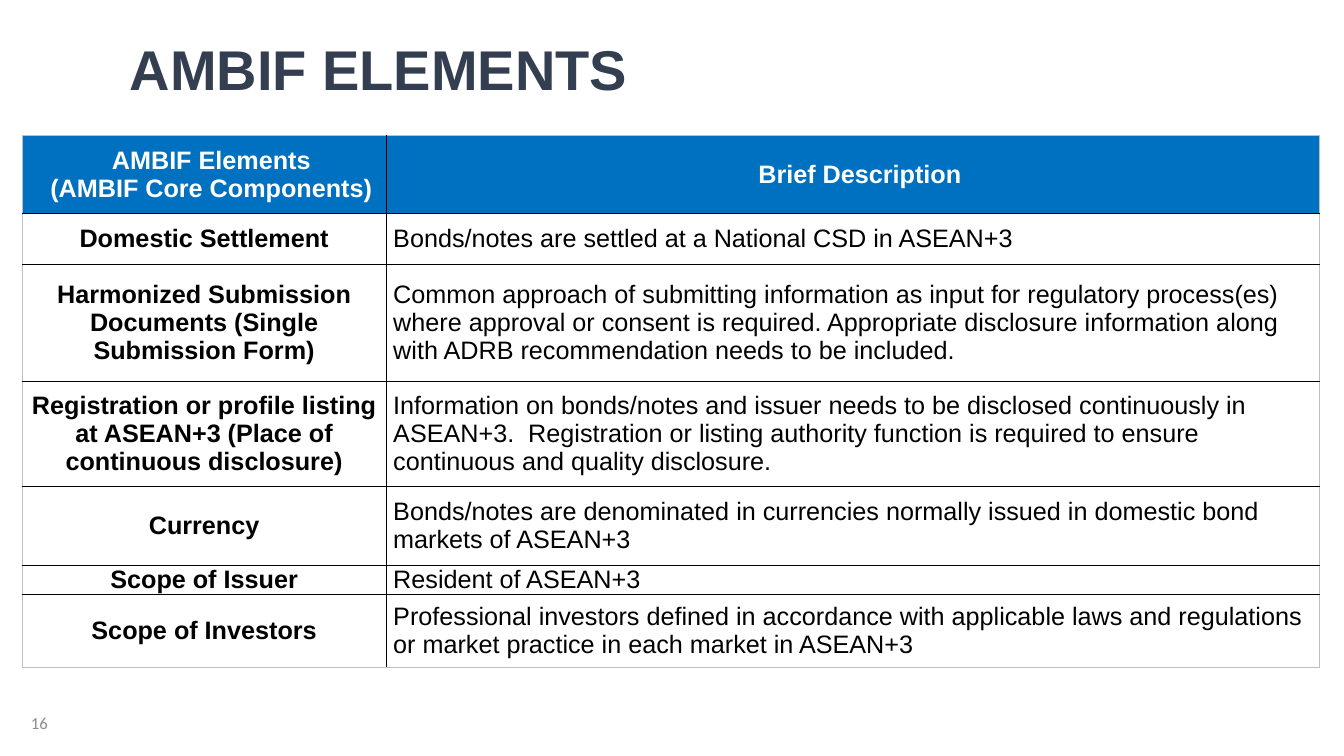
import pptx
import pptx.dml.color
import pptx.enum.text
import pptx.oxml
import pptx.oxml.ns
import pptx.util
from dataclasses import dataclass

Cm, Pt = pptx.util.Cm, pptx.util.Pt
ALIGN = pptx.enum.text.PP_ALIGN
MIDDLE = pptx.enum.text.MSO_ANCHOR.MIDDLE


@dataclass
class Theme:
    font: str = "Arial"
    number_font: str = "Calibri"
    title: str = "333F50"
    header: str = "0070C0"
    white: str = "FFFFFF"
    text: str = "000000"
    muted: str = "8C8C8C"
    edge: str = "BFBFBF"
    title_size: int = 40
    body_size: int = 18
    number_size: int = 12


class Deck:
    def __init__(self, prs, theme):
        self.theme = theme
        self.s = prs.slides.add_slide(prs.slide_layouts[5])

    def add_text(self, p, text, size, color, bold=False, font=None):
        for i, line in enumerate(text.split("\n")):
            if i:
                p.add_line_break()
            r = p.add_run()
            r.text = line
            r.font.name = font or self.theme.font
            r.font.size = Pt(size)
            r.font.bold = bold
            r.font.color.rgb = pptx.dml.color.RGBColor.from_string(color)

    def title(self, text, left, top, width, height):
        sp = self.s.shapes.title
        sp.left, sp.top, sp.width, sp.height = map(Cm, (left, top, width, height))
        tf = sp.text_frame
        tf.word_wrap = True
        tf.vertical_anchor = MIDDLE
        p = tf.paragraphs[0]
        p.alignment = ALIGN.LEFT
        p.line_spacing = 0.9
        self.add_text(p, text, self.theme.title_size, self.theme.title, True)

    def page_number(self, text, left, top, width, height):
        tf = self.s.shapes.add_textbox(*map(Cm, (left, top, width, height))).text_frame
        tf.word_wrap = True
        tf.vertical_anchor = MIDDLE
        self.add_text(tf.paragraphs[0], text, self.theme.number_size,
                      self.theme.muted, font=self.theme.number_font)

    def borders(self, cell, outer):
        """Draw the four sides, lighter where a side is on the table's edge."""
        tcPr = cell._tc.get_or_add_tcPr()
        for i, side in enumerate("LRTB"):
            color, width = (self.theme.edge, 0.5) if side in outer else (self.theme.text, 1)
            tcPr.insert(i, pptx.oxml.parse_xml(
                f'<a:ln{side} {pptx.oxml.ns.nsdecls("a")} w="{Pt(width)}"><a:solidFill>'
                f'<a:srgbClr val="{color}"/></a:solidFill></a:ln{side}>'))

    def cell(self, cell, text, header, label, outer):
        t = self.theme
        cell.margin_left = cell.margin_right = Cm(0.18)
        cell.margin_top = cell.margin_bottom = 0
        cell.vertical_anchor = MIDDLE
        if header:
            cell.fill.solid()
            cell.fill.fore_color.rgb = pptx.dml.color.RGBColor.from_string(t.header)
        else:
            cell.fill.background()
        self.borders(cell, outer)
        p = cell.text_frame.paragraphs[0]
        p.alignment = ALIGN.CENTER if header or label else ALIGN.LEFT
        if header:
            p._p.get_or_add_pPr().set("marL", str(Cm(0.36)))
        self.add_text(p, text, t.body_size, t.white if header else t.text, header or label)

    def table(self, rows, left, top, widths, heights):
        tbl = self.s.shapes.add_table(
            len(rows), len(widths), Cm(left), Cm(top),
            Cm(sum(widths)), Cm(sum(heights))).table
        tbl.horz_banding = False
        for col, width in zip(tbl.columns, widths):
            col.width = Cm(width)
        for i, (row, height) in enumerate(zip(rows, heights)):
            tbl.rows[i].height = Cm(height)
            for j, text in enumerate(row):
                outer = {"L" if j == 0 else "", "R" if j == len(widths) - 1 else "",
                         "T" if i == 0 else "", "B" if i == len(rows) - 1 else ""}
                self.cell(tbl.cell(i, j), text, i == 0, j == 0, outer)


ELEMENTS = [
    ("AMBIF Elements\n(AMBIF Core Components)", "Brief Description"),
    ("Domestic Settlement", "Bonds/notes are settled at a National CSD in ASEAN+3"),
    ("Harmonized Submission Documents (Single Submission Form)",
     "Common approach of submitting information as input for regulatory process(es) "
     "where approval or consent is required. Appropriate disclosure information along "
     "with ADRB recommendation needs to be included."),
    ("Registration or profile listing at ASEAN+3 (Place of continuous disclosure)",
     "Information on bonds/notes and issuer needs to be disclosed continuously in "
     "ASEAN+3.  Registration or listing authority function is required to ensure "
     "continuous and quality disclosure."),
    ("Currency",
     "Bonds/notes are denominated in currencies normally issued in domestic bond "
     "markets of ASEAN+3"),
    ("Scope of Issuer", "Resident of ASEAN+3"),
    ("Scope of Investors",
     "Professional investors defined in accordance with applicable laws and regulations "
     "or market practice in each market in ASEAN+3"),
]


def main():
    prs = pptx.Presentation()
    prs.slide_width, prs.slide_height = Cm(33.87), Cm(19.05)
    deck = Deck(prs, Theme())

    # Title
    deck.title("AMBIF ELEMENTS", 3.02, 0.66, 30.43, 2.31)

    # Elements and their descriptions
    deck.table(ELEMENTS, 0.56, 3.41, widths=(9.17, 23.52),
               heights=(1.98, 1.27, 2.95, 2.65, 1.98, 0.74, 1.83))

    # Page number
    deck.page_number("16", 0.53, 17.7, 7.62, 1.02)

    prs.save("out.pptx")


if __name__ == "__main__":
    main()
